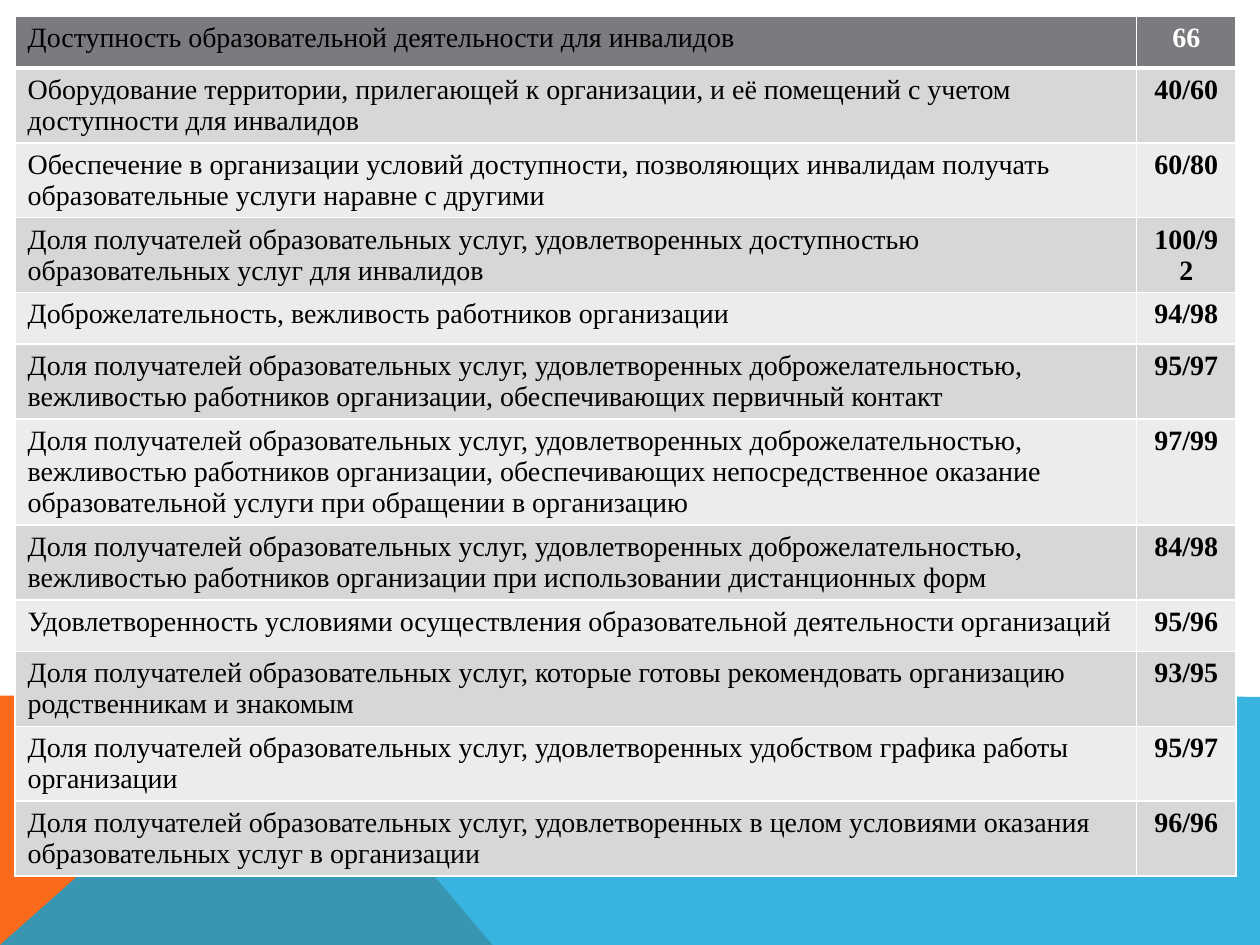
from lxml.etree import SubElement
from pptx import Presentation
from pptx.dml.color import RGBColor as RGB
from pptx.enum.text import PP_ALIGN as Align
from pptx.oxml.ns import qn
from pptx.util import Inches, Pt

THEME = {
    "font": "Times New Roman", "size": 16, "text": "000000", "header_text": "FFFFFF",
    "header": "797B7E", "bands": ("D7D7D8", "ECECEC"), "border": "FFFFFF",
    "orange": "F96A1B", "blue": "08A1D9",
}
ROWS = [
    ("Доступность образовательной деятельности для инвалидов", "66"),
    ("Оборудование территории, прилегающей к организации, и её помещений с учетом доступности для инвалидов", "40/60"),
    ("Обеспечение в организации условий доступности, позволяющих инвалидам получать образовательные услуги наравне с другими", "60/80"),
    ("Доля получателей образовательных услуг, удовлетворенных доступностью образовательных услуг для инвалидов", "100/92"),
    ("Доброжелательность, вежливость работников организации", "94/98"),
    ("Доля получателей образовательных услуг, удовлетворенных доброжелательностью, вежливостью работников организации, обеспечивающих первичный контакт", "95/97"),
    ("Доля получателей образовательных услуг, удовлетворенных доброжелательностью, вежливостью работников организации, обеспечивающих непосредственное оказание образовательной услуги при обращении в организацию", "97/99"),
    ("Доля получателей образовательных услуг, удовлетворенных доброжелательностью, вежливостью работников организации при использовании дистанционных форм", "84/98"),
    ("Удовлетворенность условиями осуществления образовательной деятельности организаций", "95/96"),
    ("Доля получателей образовательных услуг, которые готовы рекомендовать организацию родственникам и знакомым", "93/95"),
    ("Доля получателей образовательных услуг, удовлетворенных удобством графика работы организации", "95/97"),
    ("Доля получателей образовательных услуг, удовлетворенных в целом условиями оказания образовательных услуг в организации", "96/96"),
]
COL_WIDTHS = (8.9, 0.79)
ROW_HEIGHT = 0.41
TABLE_LEFT, TABLE_TOP = 0.12, 0.13
BACKDROP = [
    ([(0, 7.5), (0, 5.52), (2.23, 5.52), (3.91, 7.5)], "orange", 100),
    ([(0, 7.5), (2.23, 5.52), (10, 5.53), (10, 7.5)], "blue", 80),
]


def add_polygon(slide, points, color, opacity):
    start, *rest = [(Inches(x), Inches(y)) for x, y in points]
    builder = slide.shapes.build_freeform(*start)
    builder.add_line_segments(rest, close=True)
    s = builder.convert_to_shape()
    s.shadow.inherit = False
    s.fill.solid()
    s.fill.fore_color.rgb = RGB.from_string(THEME[color])
    s.line.fill.background()
    if opacity < 100:
        clr = s._element.spPr.find(qn("a:solidFill"))[0]
        SubElement(clr, qn("a:alpha"), val=str(opacity * 1000))


def set_borders(cell, row):
    widths = {"L": 1, "R": 1, "T": 3 if row == 1 else 1, "B": 3 if row == 0 else 1}
    tc_pr = cell._tc.get_or_add_tcPr()
    for side, width in widths.items():
        ln = SubElement(tc_pr, qn(f"a:ln{side}"), w=str(Pt(width)))
        fill = SubElement(ln, qn("a:solidFill"))
        SubElement(fill, qn("a:srgbClr"), val=THEME["border"])


def fill_cell(cell, text, row, is_score):
    set_borders(cell, row)
    cell.fill.solid()
    color = THEME["bands"][(row - 1) % 2] if row else THEME["header"]
    cell.fill.fore_color.rgb = RGB.from_string(color)
    cell.text_frame.text = text
    p = cell.text_frame.paragraphs[0]
    p.alignment = Align.CENTER if is_score else Align.LEFT
    font = p.runs[0].font
    font.name, font.size, font.bold = THEME["font"], Pt(THEME["size"]), is_score
    text_color = "header_text" if is_score and row == 0 else "text"
    font.color.rgb = RGB.from_string(THEME[text_color])


def add_scores(slide):
    table = slide.shapes.add_table(
        len(ROWS), len(COL_WIDTHS), Inches(TABLE_LEFT), Inches(TABLE_TOP),
        Inches(sum(COL_WIDTHS)), Inches(ROW_HEIGHT * len(ROWS))).table
    for column, width in zip(table.columns, COL_WIDTHS):
        column.width = Inches(width)
    for i, values in enumerate(ROWS):
        table.rows[i].height = Inches(ROW_HEIGHT)
        for j, text in enumerate(values):
            fill_cell(table.cell(i, j), text, i, j == 1)


def main():
    prs = Presentation()
    prs.slide_width, prs.slide_height = Inches(10), Inches(7.5)
    slide = prs.slides.add_slide(prs.slide_layouts[6])
    for points, color, opacity in BACKDROP:
        add_polygon(slide, points, color, opacity)
    add_scores(slide)
    prs.save("out.pptx")


if __name__ == "__main__":
    main()
